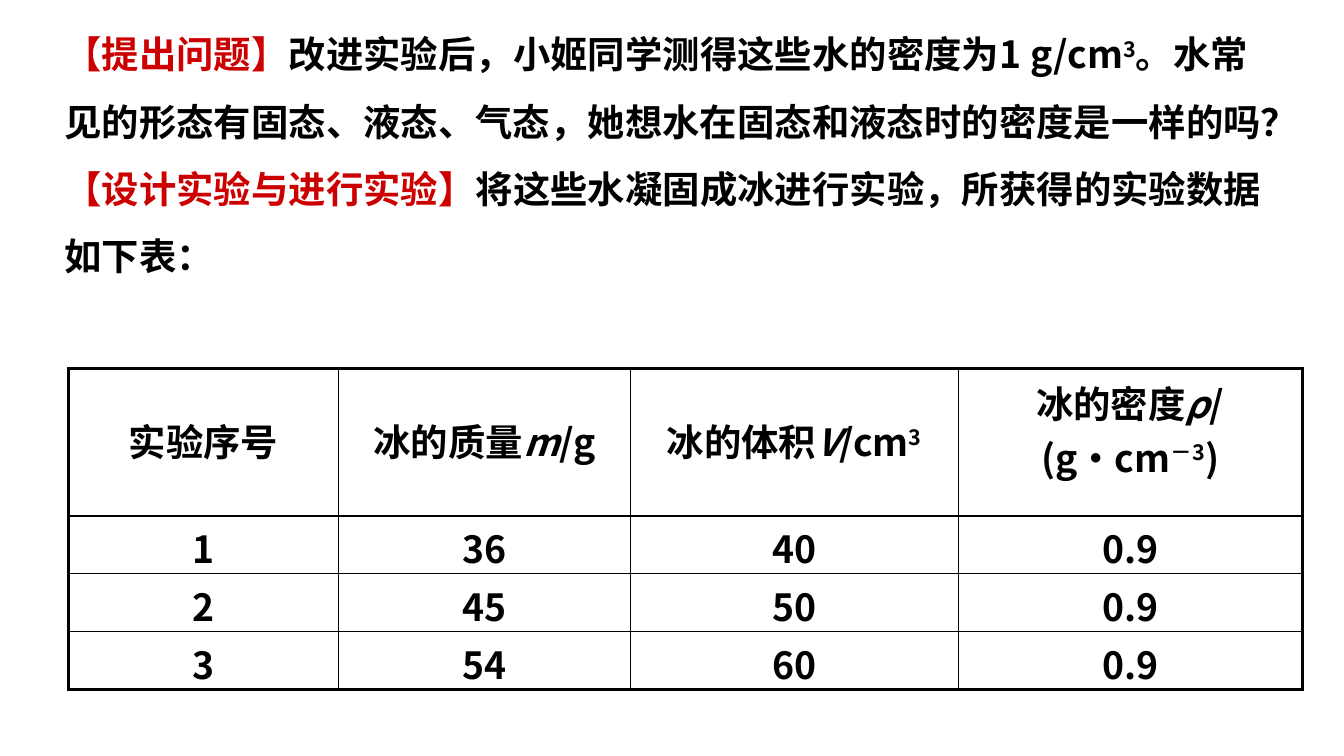
from dataclasses import dataclass

from lxml import etree
from pptx import Presentation
from pptx.dml.color import RGBColor
from pptx.enum.text import MSO_ANCHOR, MSO_AUTO_SIZE, PP_ALIGN
from pptx.oxml.ns import qn
from pptx.util import Inches, Pt

MIDDLE = MSO_ANCHOR.MIDDLE
CENTER = PP_ALIGN.CENTER
GROW = MSO_AUTO_SIZE.SHAPE_TO_FIT_TEXT


@dataclass(frozen=True)
class Theme:
    font: str = "Noto Sans CJK SC"
    size: int = 20
    black: str = "000000"
    red: str = "CC0000"
    thin: float = 0.75
    thick: float = 2


@dataclass(frozen=True)
class Part:
    text: str
    color: str = Theme.black
    italic: bool = False
    raised: bool = False


THEME = Theme()
WIDE = 10
HIGH = WIDE * 9 / 16
INTRO = [
    [Part("【提出问题】", THEME.red),
     Part("改进实验后，小姬同学测得这些水的密度为1 g/cm"),
     Part("3", raised=True),
     Part("。水常见的形态有固态、液态、气态，她想水在固态和液态时的密度是一样的吗？")],
    [Part("【设计实验与进行实验】", THEME.red),
     Part("将这些水凝固成冰进行实验，所获得的实验数据如下表：")],
]
HEADS = [
    [Part("实验序号")],
    [Part("冰的质量"), Part("m", italic=True), Part("/g")],
    [Part("冰的体积"), Part("V", italic=True), Part("/cm"), Part("3", raised=True)],
    [Part("冰的密度"), Part("ρ", italic=True), Part("/(g·cm"),
     Part("－3", raised=True), Part(")")],
]
DATA = [("1", "36", "40", "0.9"), ("2", "45", "50", "0.9"), ("3", "54", "60", "0.9")]
WIDTHS = [2.01, 2.17, 2.44, 2.56]
HEIGHTS = [1.1] + [0.43] * len(DATA)


def write(para, parts: list[Part]) -> None:
    for part in parts:
        run = para.add_run()
        run.text = part.text
        font = run.font
        font.name, font.size, font.bold = THEME.font, Pt(THEME.size), True
        font.color.rgb = RGBColor.from_string(part.color)
        props = font._element
        if part.italic:
            font.italic = True
        if part.raised:
            props.set("baseline", "30000")
        east = etree.Element(qn("a:ea"), typeface=THEME.font)
        props.find(qn("a:latin")).addnext(east)


def border(cell, outer: dict[str, bool]) -> None:
    """Draw thick lines on outer sides and thin lines on the others."""
    props = cell._tc.get_or_add_tcPr()
    for spot, (side, thick) in enumerate(outer.items()):
        width = THEME.thick if thick else THEME.thin
        line = etree.Element(qn(f"a:ln{side}"), w=str(Pt(width)))
        fill = etree.SubElement(line, qn("a:solidFill"))
        etree.SubElement(fill, qn("a:srgbClr"), val=THEME.black)
        props.insert(spot, line)


def add_intro(slide) -> None:
    box = slide.shapes.add_textbox(Inches(0.38), Inches(0.02), Inches(9.18), Inches(2.6))
    frame = box.text_frame
    frame.word_wrap = True
    frame.auto_size = GROW
    for num, parts in enumerate(INTRO):
        para = frame.add_paragraph() if num else frame.paragraphs[0]
        para.line_spacing = 1.5
        write(para, parts)


def add_grid(slide) -> None:
    rows = [HEADS] + [[[Part(text)] for text in line] for line in DATA]
    last_row, last_col = len(rows) - 1, len(WIDTHS) - 1
    table = slide.shapes.add_table(
        len(rows), len(WIDTHS), Inches(0.51), Inches(2.74),
        Inches(sum(WIDTHS)), Inches(sum(HEIGHTS))).table
    table.first_row = table.horz_banding = False
    for col, width in zip(table.columns, WIDTHS):
        col.width = Inches(width)
    for row, height in zip(table.rows, HEIGHTS):
        row.height = Inches(height)
    for r, row in enumerate(rows):
        for c, parts in enumerate(row):
            cell = table.cell(r, c)
            cell.vertical_anchor = MIDDLE
            cell.margin_top, cell.margin_bottom = Inches(0.03), Inches(0)
            cell.fill.background()
            para = cell.text_frame.paragraphs[0]
            para.alignment = CENTER
            write(para, parts)
            border(cell, {"L": c == 0, "R": c == last_col,
                          "T": r == 0, "B": r == last_row})
        if r == 0:
            for cell in table.rows[r].cells:
                cell.margin_bottom = Inches(0.06)
    # The two-line heading sits a little above the middle.
    table.cell(0, last_col).margin_bottom = Inches(0.23)


def main() -> None:
    deck = Presentation()
    deck.slide_width, deck.slide_height = Inches(WIDE), Inches(HIGH)
    slide = deck.slides.add_slide(deck.slide_layouts[6])
    add_intro(slide)
    add_grid(slide)
    deck.save("out.pptx")


if __name__ == "__main__":
    main()
